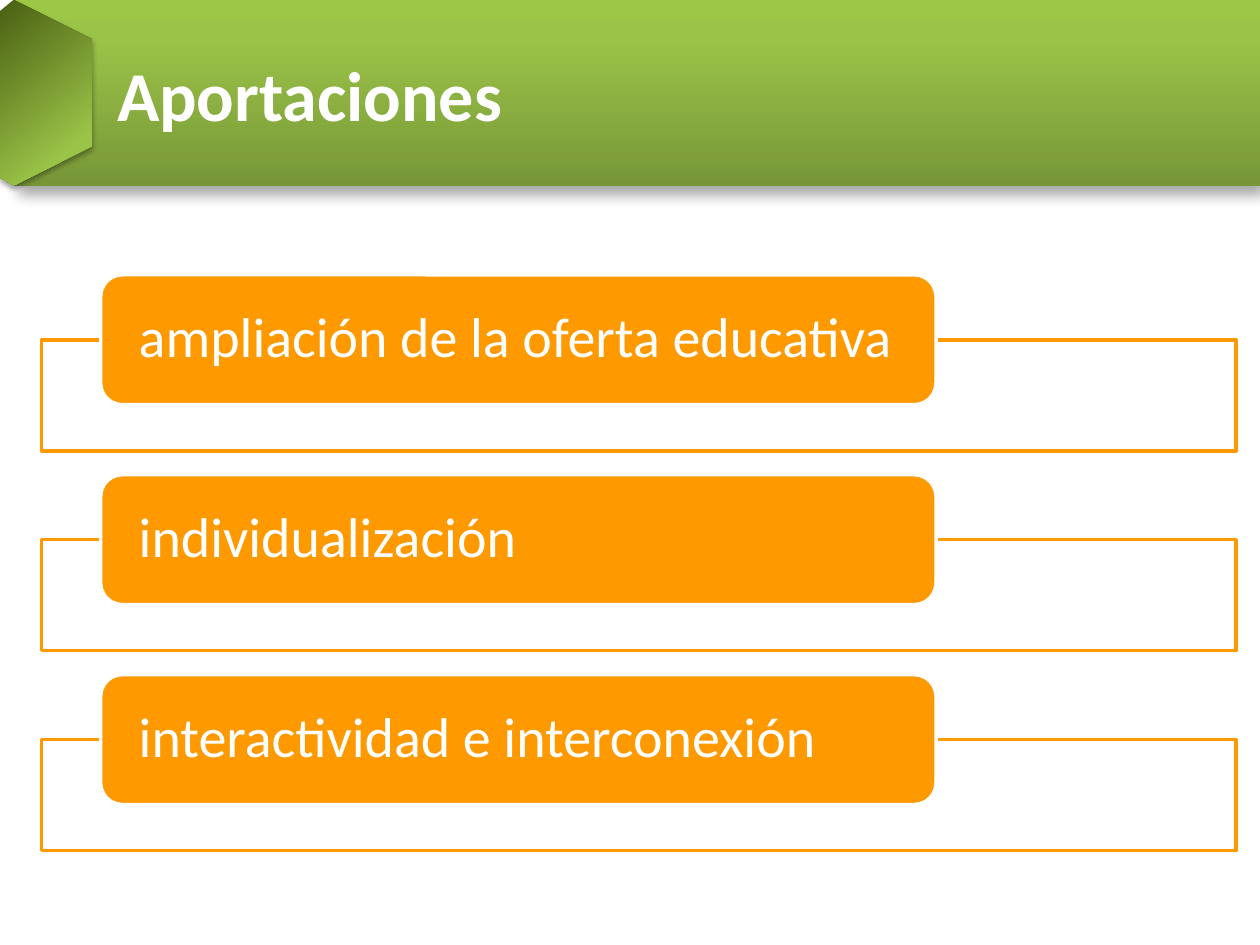
from dataclasses import dataclass

from lxml import etree
from pptx import Presentation
from pptx.dml.color import RGBColor
from pptx.enum.shapes import MSO_SHAPE
from pptx.enum.text import MSO_ANCHOR, PP_ALIGN
from pptx.oxml import parse_xml
from pptx.oxml.ns import nsdecls, qn
from pptx.util import Cm, Pt

RECT, ROUND = MSO_SHAPE.RECTANGLE, MSO_SHAPE.ROUNDED_RECTANGLE
MIDDLE, LEFT = MSO_ANCHOR.MIDDLE, PP_ALIGN.LEFT

HUES = {
    "white": "FFFFFF",
    "black": "000000",
    "orange": "FF9900",
    "olive": "779737",
    "moss": "495F12",
    "leaf": "9BC348",
    "lime": "9DC746",
}
FONT = "Calibri"


@dataclass
class Box:
    left: float
    top: float
    width: float
    height: float

    def cm(self) -> tuple:
        return Cm(self.left), Cm(self.top), Cm(self.width), Cm(self.height)


@dataclass
class Shade:
    blur: float
    dist: float
    angle: int


def hue(name: str) -> RGBColor:
    return RGBColor.from_string(HUES[name])


def add_box(slide, kind, box: Box, fill: str, line: str):
    shape = slide.shapes.add_shape(kind, *box.cm())
    shape.shadow.inherit = False
    shape.fill.solid()
    shape.fill.fore_color.rgb = hue(fill)
    shape.line.color.rgb = hue(line)
    shape.line.width = Pt(2)
    return shape


def fade(shape, dark: str, angle: int, shade: Shade) -> None:
    """Give a shape a green gradient, no outline and a soft shadow."""
    shape.line.fill.background()
    shape.shadow.inherit = False
    props = shape._element.spPr
    stops = "".join(
        f'<a:gs pos="{spot * 1000}"><a:srgbClr val="{HUES[name]}"/></a:gs>'
        for spot, name in ((0, dark), (80, "leaf"), (100, "lime"))
    )
    props.find(qn("a:ln")).addprevious(parse_xml(
        f'<a:gradFill {nsdecls("a")} rotWithShape="1"><a:gsLst>{stops}</a:gsLst>'
        f'<a:lin ang="{angle * 60000}" scaled="0"/></a:gradFill>'
    ))
    drop = etree.SubElement(
        props.find(qn("a:effectLst")), qn("a:outerShdw"),
        blurRad=str(Pt(shade.blur)), dist=str(Pt(shade.dist)),
        dir=str(shade.angle * 60000), algn="ctr", rotWithShape="0",
    )
    tint = etree.SubElement(drop, qn("a:srgbClr"), val=HUES["black"])
    etree.SubElement(tint, qn("a:alpha"), val="35000")


def put_text(shape, text: str, size: int, bold: bool = False,
             space: float = 0.9, side: float = 0.64, edge: float = 0) -> None:
    frame = shape.text_frame
    frame.word_wrap = True
    frame.vertical_anchor = MIDDLE
    frame.margin_left = frame.margin_right = Cm(side)
    frame.margin_top = frame.margin_bottom = Cm(edge)
    para = frame.paragraphs[0]
    para.alignment = LEFT
    para.line_spacing = space
    run = para.add_run()
    run.text = text
    run.font.name = FONT
    run.font.size = Pt(size)
    run.font.bold = bold
    run.font.color.rgb = hue("white")


def add_row(slide, text: str, top: float) -> None:
    frame = add_box(slide, RECT, Box(0.84, top, 24.08, 2.24), "white", "orange")
    tint = frame._element.spPr.find(qn("a:solidFill"))[0]
    etree.SubElement(tint, qn("a:alpha"), val="90000")
    label = add_box(slide, ROUND, Box(2.03, top - 1.31, 16.84, 2.62),
                    "orange", "white")
    put_text(label, text, size=32)


def main() -> None:
    deck = Presentation()
    deck.slide_width, deck.slide_height = Cm(25.4), Cm(19.05)
    slide = deck.slides.add_slide(deck.slide_layouts[6])

    # Header band
    band = slide.shapes.add_shape(RECT, *Box(0.28, 0, 25.12, 3.75).cm())
    fade(band, "olive", 270, Shade(8, 5, 60))

    # Hexagon cut off by the left edge
    spots = [(Cm(x), Cm(y)) for x, y in (
        (0, 0.23), (0.28, 0), (1.85, 0.79), (1.85, 2.95), (0.28, 3.74), (0, 3.58))]
    pen = slide.shapes.build_freeform(*spots[0])
    pen.add_line_segments(spots[1:], close=True)
    fade(pen.convert_to_shape(), "moss", 50, Shade(3.1, 1.8, 90))

    # Contributions
    for step, text in enumerate((
        "ampliación de la oferta educativa",
        "individualización",
        "interactividad e interconexión",
    )):
        add_row(slide, text, 6.85 + step * 4.03)

    # Title
    title = slide.shapes.add_textbox(*Box(2.11, 0.46, 22.89, 3.18).cm())
    put_text(title, "Aportaciones", size=40, bold=True,
             space=0.8, side=0.25, edge=0.13)

    deck.save("out.pptx")


if __name__ == "__main__":
    main()
